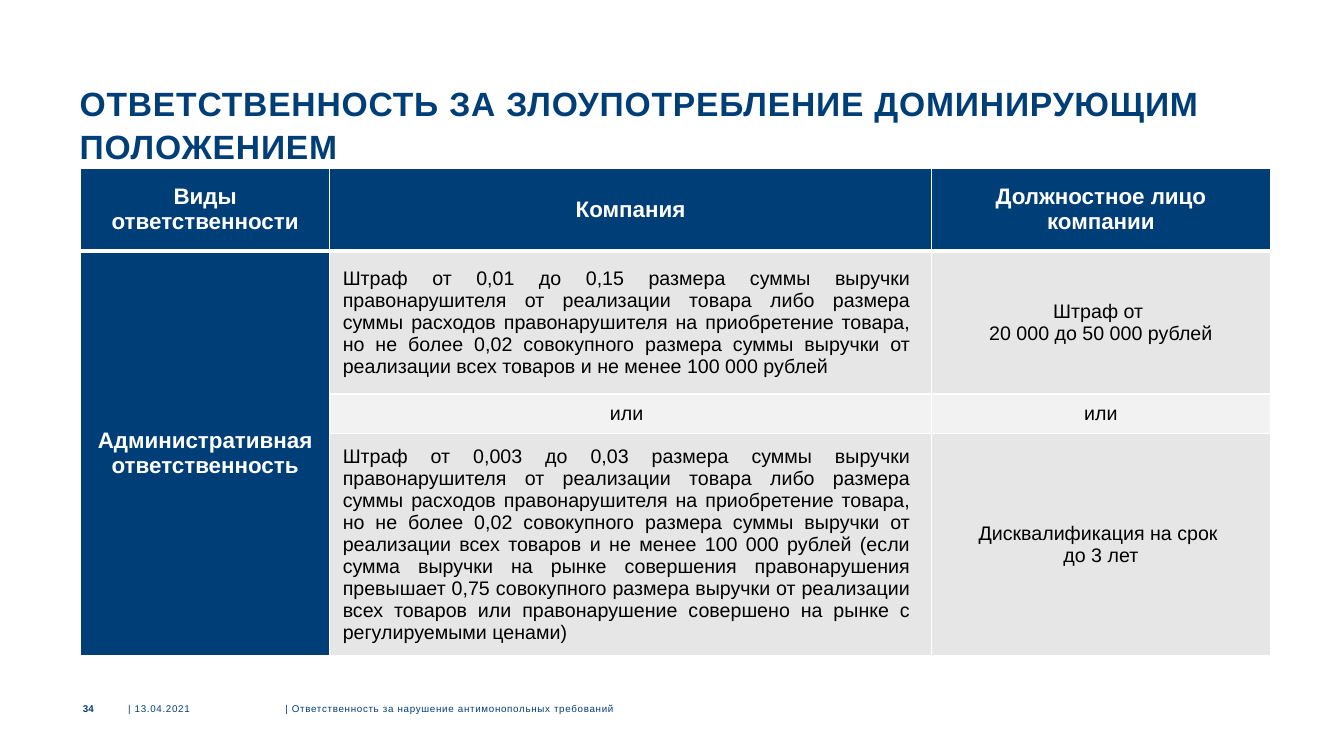
"""Build the slide on liability for abuse of a dominant position."""
from lxml.etree import SubElement
from pptx import Presentation
from pptx.dml.color import RGBColor
from pptx.enum.text import MSO_ANCHOR as ANCHOR, PP_ALIGN as ALIGN
from pptx.oxml.ns import qn
from pptx.util import Pt

PX = 9144
NAVY = RGBColor(0x00, 0x3E, 0x77)
WHITE = RGBColor(0xFF, 0xFF, 0xFF)
BLACK = RGBColor(0x00, 0x00, 0x00)
GREY = RGBColor(0xE7, 0xE6, 0xE6)
LIGHT = RGBColor(0xF3, 0xF2, 0xF2)


def style(p, size, color, bold=False, align=ALIGN.LEFT, spacing=0):
    p.alignment = align
    p.font.name, p.font.size, p.font.bold = "Arial", Pt(size), bold
    p.font.color.rgb = color
    if spacing:
        p._p.pPr.find(qn("a:defRPr")).set("spc", str(spacing))


def add_text(box, text, anchor, wrap=True, **look):
    tf = s.shapes.add_textbox(*[v * PX for v in box]).text_frame
    tf.margin_left = tf.margin_top = tf.margin_right = tf.margin_bottom = 0
    tf.vertical_anchor, tf.word_wrap = anchor, wrap
    p = tf.paragraphs[0]
    p.text = text
    style(p, color=NAVY, **look)
    return p


prs = Presentation()
prs.slide_width, prs.slide_height = 1333 * PX, 750 * PX
s = prs.slides.add_slide(prs.slide_layouts[6])

title = add_text((79, 79, 1176, 87),
                 "ОТВЕТСТВЕННОСТЬ ЗА ЗЛОУПОТРЕБЛЕНИЕ ДОМИНИРУЮЩИМ ПОЛОЖЕНИЕМ",
                 ANCHOR.TOP, size=24, bold=True, spacing=60)
title.line_spacing = Pt(31)

fine = ("размера суммы выручки правонарушителя от реализации товара либо размера "
        "суммы расходов правонарушителя на приобретение товара, но не более 0,02 "
        "совокупного размера суммы выручки от реализации всех товаров и не менее "
        "100 000 рублей")
rows = [
    ["Виды ответственности", "Компания", "Должностное лицо компании"],
    ["Административная ответственность", f"Штраф от 0,01 до 0,15 {fine}",
     "Штраф от \n20 000 до 50 000 рублей"],
    ["", "или", "или"],
    ["", f"Штраф от 0,003 до 0,03 {fine} (если сумма выручки на рынке совершения "
     "правонарушения превышает 0,75 совокупного размера выручки от реализации всех "
     "товаров или правонарушение совершено на рынке с регулируемыми ценами)",
     "Дисквалификация на срок \vдо 3 лет"],
]
widths = [247, 597, 336]
heights = [82, 142, 39, 199]
table = s.shapes.add_table(len(rows), len(widths), 80 * PX, 167 * PX,
                           sum(widths) * PX, sum(heights) * PX).table
table.horz_banding = False
for column, width in zip(table.columns, widths):
    column.width = width * PX
for row, height in zip(table.rows, heights):
    row.height = height * PX

for i, texts in enumerate(rows):
    for j, text in enumerate(texts):
        cell = table.cell(i, j)
        head = i == 0 or j == 0
        cell.text = text
        cell.vertical_anchor = ANCHOR.MIDDLE
        cell.margin_left = 13 * PX
        cell.margin_right = (21 if j == 1 and i > 0 else 13) * PX
        cell.margin_top = cell.margin_bottom = 5 * PX
        justified = j == 1 and i in (1, 3)
        for p in cell.text_frame.paragraphs:
            style(p, 16 if head else 14, WHITE if head else BLACK, head,
                  ALIGN.JUSTIFY if justified else ALIGN.CENTER)
        tcPr = cell._tc.get_or_add_tcPr()
        for side in ("lnL", "lnR", "lnT", "lnB"):
            thick = (i, side) in ((0, "lnB"), (1, "lnT"))
            ln = SubElement(tcPr, qn(f"a:{side}"), w=str(Pt(3 if thick else 1)))
            fill = SubElement(ln, qn("a:solidFill"))
            SubElement(fill, qn("a:srgbClr"), val=str(WHITE))
        cell.fill.solid()
        cell.fill.fore_color.rgb = NAVY if head else LIGHT if i == 2 else GREY
table.cell(1, 0).merge(table.cell(3, 0))

add_text((127, 695, 153, 16), "| 13.04.2021", ANCHOR.MIDDLE, wrap=False,
         size=7, spacing=50)
add_text((283, 695, 588, 16),
         "| Ответственность за нарушение антимонопольных требований",
         ANCHOR.MIDDLE, size=7, spacing=50)
add_text((79, 695, 14, 16), "34", ANCHOR.MIDDLE, wrap=False,
         size=7, bold=True, align=ALIGN.RIGHT)

prs.save("out.pptx")
